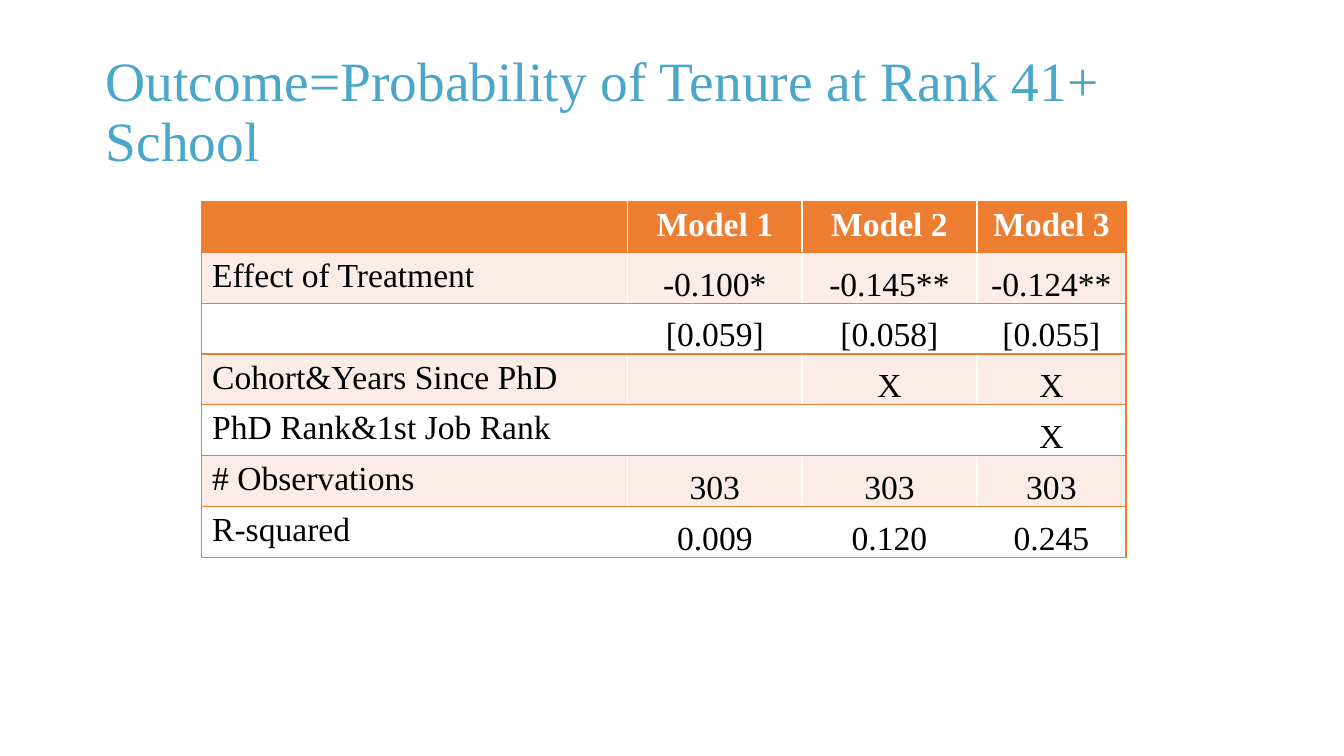
from lxml import etree
from pptx import Presentation
from pptx.dml.color import RGBColor
from pptx.enum.text import MSO_ANCHOR, PP_ALIGN
from pptx.oxml.ns import qn
from pptx.util import Cm, Pt

TOP, MIDDLE, BOTTOM = MSO_ANCHOR.TOP, MSO_ANCHOR.MIDDLE, MSO_ANCHOR.BOTTOM
LEFT, CENTER = PP_ALIGN.LEFT, PP_ALIGN.CENTER

FONT = "Times New Roman"
BLUE = RGBColor(0x4B, 0xA7, 0xC9)
ORANGE = RGBColor(0xED, 0x7D, 0x31)
PALE_ORANGE = RGBColor(0xFC, 0xEC, 0xE8)
WHITE = RGBColor(0xFF, 0xFF, 0xFF)
BLACK = RGBColor(0, 0, 0)

COL_WIDTHS = [Cm(8.05), Cm(3.3), Cm(3.3), Cm(2.82)]
ROW_HEIGHT = Cm(0.95)
ROWS = [
    ["", "Model 1", "Model 2", "Model 3"],
    ["Effect of Treatment", "-0.100*", "-0.145**", "-0.124**"],
    ["", "[0.059]", "[0.058]", "[0.055]"],
    ["Cohort&Years Since PhD", "", "X", "X"],
    ["PhD Rank&1st Job Rank", "", "", "X"],
    ["# Observations", "303", "303", "303"],
    ["R-squared", "0.009", "0.120", "0.245"],
]


def add_run(p, text, size, color, bold=False):
    r = p.add_run()
    r.text = text
    r.font.name = FONT
    r.font.size = Pt(size)
    r.font.bold = bold
    r.font.color.rgb = color


def add_title(slide, text):
    box = slide.shapes.add_textbox(Cm(1.75), Cm(0.76), Cm(21.9), Cm(2.76))
    tf = box.text_frame
    tf.word_wrap = True
    tf.vertical_anchor = MIDDLE
    p = tf.paragraphs[0]
    p.line_spacing = 0.9
    add_run(p, text, 29.7, BLUE)


def set_borders(cell, sides):
    """Draw orange lines on the given sides, named in the order L, R, T, B."""
    tc_pr = cell._tc.get_or_add_tcPr()
    for side in sides:
        ln = etree.SubElement(tc_pr, qn(f"a:ln{side}"), w=str(Pt(1)))
        fill = etree.SubElement(ln, qn("a:solidFill"))
        etree.SubElement(fill, qn("a:srgbClr"), val=str(ORANGE))


def set_margins(cell, side, top, bottom):
    cell.margin_left = cell.margin_right = side
    cell.margin_top, cell.margin_bottom = top, bottom


def fill_cell(cell, text, row, col):
    is_header, is_label = row == 0, col == 0
    sides = ["L"] if is_label else []
    if col == len(COL_WIDTHS) - 1:
        sides.append("R")
    set_borders(cell, sides + ["T", "B"])
    cell.fill.solid()
    if is_header:
        cell.fill.fore_color.rgb = ORANGE
    else:
        cell.fill.fore_color.rgb = PALE_ORANGE if row % 2 else WHITE

    if text and (is_header or is_label):
        set_margins(cell, Cm(0.2), Cm(0.1), Cm(0.1))
        cell.vertical_anchor = TOP
    else:
        set_margins(cell, Cm(0.02), Cm(0.02), 0)
        cell.vertical_anchor = BOTTOM
    if text:
        p = cell.text_frame.paragraphs[0]
        p.alignment = LEFT if is_label else CENTER
        add_run(p, text, 18, WHITE if is_header else BLACK, is_header)


def add_results_table(slide):
    frame = slide.shapes.add_table(
        len(ROWS), len(COL_WIDTHS), Cm(3.81), Cm(3.81),
        sum(COL_WIDTHS), ROW_HEIGHT * len(ROWS))
    table = frame.table
    for column, width in zip(table.columns, COL_WIDTHS):
        column.width = width
    for row, texts in enumerate(ROWS):
        table.rows[row].height = ROW_HEIGHT
        for col, text in enumerate(texts):
            fill_cell(table.cell(row, col), text, row, col)


def main():
    prs = Presentation()
    prs.slide_width, prs.slide_height = Cm(25.4), Cm(14.29)
    slide = prs.slides.add_slide(prs.slide_layouts[6])
    add_title(slide, "Outcome=Probability of Tenure at Rank 41+ School")
    add_results_table(slide)
    prs.save("out.pptx")


if __name__ == "__main__":
    main()
